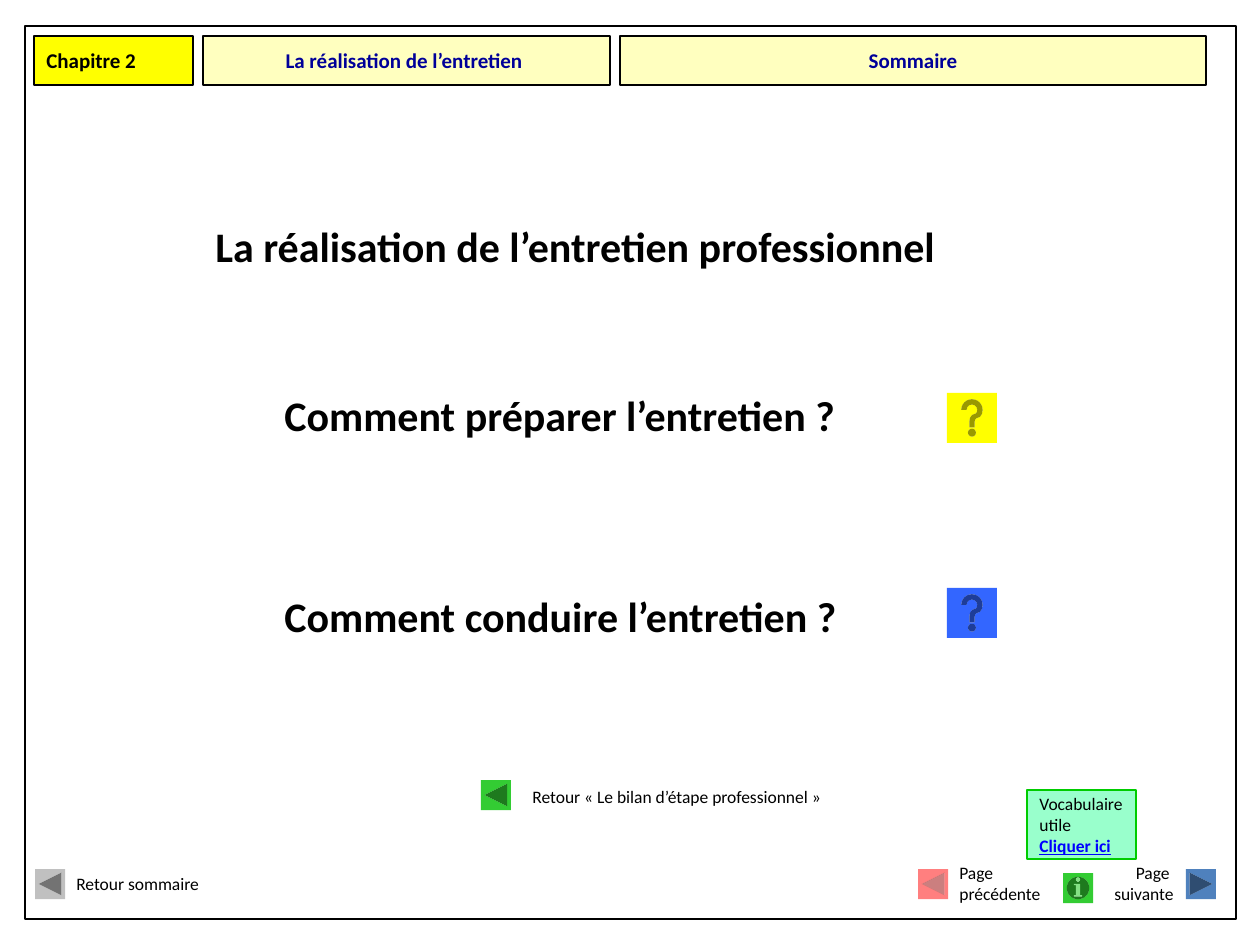
from dataclasses import dataclass

from lxml import etree
from pptx import Presentation
from pptx.dml.color import RGBColor
from pptx.enum.shapes import MSO_SHAPE
from pptx.enum.text import MSO_ANCHOR, PP_ALIGN
from pptx.oxml.ns import qn
from pptx.util import Emu, Pt

RECT = MSO_SHAPE.RECTANGLE
BACK = MSO_SHAPE.ACTION_BUTTON_BACK_OR_PREVIOUS
NEXT = MSO_SHAPE.ACTION_BUTTON_FORWARD_OR_NEXT
HELP = MSO_SHAPE.ACTION_BUTTON_HELP
INFO = MSO_SHAPE.ACTION_BUTTON_INFORMATION
TOP, MIDDLE = MSO_ANCHOR.TOP, MSO_ANCHOR.MIDDLE
LEFT, CENTER, RIGHT = PP_ALIGN.LEFT, PP_ALIGN.CENTER, PP_ALIGN.RIGHT

EMU_PER_PX = 914400 / 126
ICON, BIG_ICON = 30, 50


@dataclass(frozen=True)
class Theme:
    font: str = "Calibri"
    title: int = 24
    header: int = 12
    small: int = 10
    line: float = 0.75
    black: str = "000000"
    navy: str = "000099"
    link: str = "0000FF"
    yellow: str = "FFFF00"
    blue: str = "3366FF"
    steel: str = "4F81BD"
    green: str = "33CC33"
    mint: str = "99FFCC"
    mint_line: str = "00CC00"
    grey: str = "C0C0C0"
    red: str = "FF0000"


T = Theme()


def px(n):
    return Emu(round(n * EMU_PER_PX))


def add_shape(s, kind, box, fill=None, line=None, alpha=100):
    """Add a preset shape; alpha is the opacity of its fill in percent."""
    sp = s.shapes.add_shape(kind, *map(px, box))
    sp.shadow.inherit = False
    if fill:
        sp.fill.solid()
        sp.fill.fore_color.rgb = RGBColor.from_string(fill)
        if alpha < 100:
            color = sp.fill._xPr.find(qn("a:solidFill"))[0]
            etree.SubElement(color, qn("a:alpha"), val=str(alpha * 1000))
    else:
        sp.fill.background()
    if line:
        sp.line.color.rgb = RGBColor.from_string(line)
        sp.line.width = Pt(T.line)
    else:
        sp.line.fill.background()
    return sp


def write(sp, lines, size, color=T.black, bold=False, align=LEFT,
          anchor=MIDDLE, wrap=True, gap=0):
    """Fill a shape with one paragraph per line, gap points apart."""
    tf = sp.text_frame
    tf.word_wrap = wrap
    tf.vertical_anchor = anchor
    for i, line in enumerate(lines):
        p = tf.add_paragraph() if i else tf.paragraphs[0]
        p.alignment = align
        if i and gap:
            p.space_before = Pt(gap)
        r = p.add_run()
        r.text = line
        r.font.name = T.font
        r.font.size = Pt(size)
        r.font.bold = bold
        r.font.color.rgb = RGBColor.from_string(color)
    return tf


def add_text(s, box, lines, size, **style):
    return write(s.shapes.add_textbox(*map(px, box)), lines, size, **style)


def add_header(s, box):
    x, y, w, h = box
    chapter_w, title_w, gap = 159, 407, 10
    title_x = x + chapter_w + gap
    summary_x = title_x + title_w + gap
    for text, left, width in (("La réalisation de l’entretien ", title_x, title_w),
                              ("Sommaire", summary_x, x + w - summary_x)):
        sp = add_shape(s, RECT, (left, y, width, h), T.yellow, T.black, alpha=25)
        write(sp, [text], T.header, T.navy, bold=True, align=CENTER)
    sp = add_shape(s, RECT, (x, y, chapter_w, h), T.yellow, T.black)
    write(sp, ["Chapitre 2"], T.header, bold=True, wrap=False)


def add_questions(s, box):
    x, y, w, h = box
    add_text(s, (x, y, 856, 63), ["La réalisation de l’entretien professionnel"],
             T.title, bold=True, anchor=TOP)
    add_text(s, (x + 69, y + 169, 658, h - 169),
             ["Comment préparer l’entretien ?", "Comment conduire l’entretien ?"],
             T.title, bold=True, anchor=TOP, gap=86)
    for top, color in ((179, T.yellow), (374, T.blue)):
        add_shape(s, HELP, (x + w - BIG_ICON, y + top, BIG_ICON, BIG_ICON), color)


def add_return_link(s, box):
    x, y, w, h = box
    add_shape(s, BACK, (x, y, ICON, ICON), T.green)
    add_text(s, (x + 39, y, w - 39, h),
             ["Retour «\u00a0Le bilan d’étape professionnel\u00a0»"],
             T.small, anchor=TOP)


def add_vocabulary(s, box):
    sp = add_shape(s, RECT, box, T.mint, T.mint_line)
    tf = write(sp, ["Vocabulaire", "utile", "Cliquer ici"], T.small, wrap=False)
    font = tf.paragraphs[-1].runs[0].font
    font.bold = font.underline = True
    font.color.rgb = RGBColor.from_string(T.link)


def add_navigation(s, box):
    x, y, w, h = box
    icon_y = y + 10
    for kind, left, top, color, alpha in (
            (BACK, 0, icon_y, T.grey, 100),
            (BACK, 883, icon_y, T.red, 50),
            (INFO, 1028, icon_y + 4, T.green, 100),
            (NEXT, w - ICON, icon_y, T.steel, 100)):
        add_shape(s, kind, (x + left, top, ICON, ICON), color, alpha=alpha)
    for lines, left, width, align in (
            (["Retour sommaire"], 29, 228, LEFT),
            (["Page", "précédente"], 912, 110, LEFT),
            (["Page ", "suivante"], 1061, 90, RIGHT)):
        add_text(s, (x + left, y, width, h), lines, T.small,
                 align=align, wrap=False)


def main():
    prs = Presentation()
    prs.slide_width, prs.slide_height = px(1260), px(945)
    s = prs.slides.add_slide(prs.slide_layouts[6])
    add_header(s, (34, 36, 1172, 49))
    add_shape(s, RECT, (25, 26, 1211, 893), line=T.black)
    add_questions(s, (203, 214, 794, 434))
    add_return_link(s, (481, 780, 525, 34))
    add_vocabulary(s, (1027, 790, 109, 69))
    add_navigation(s, (35, 859, 1181, 49))
    prs.save("out.pptx")


if __name__ == "__main__":
    main()
